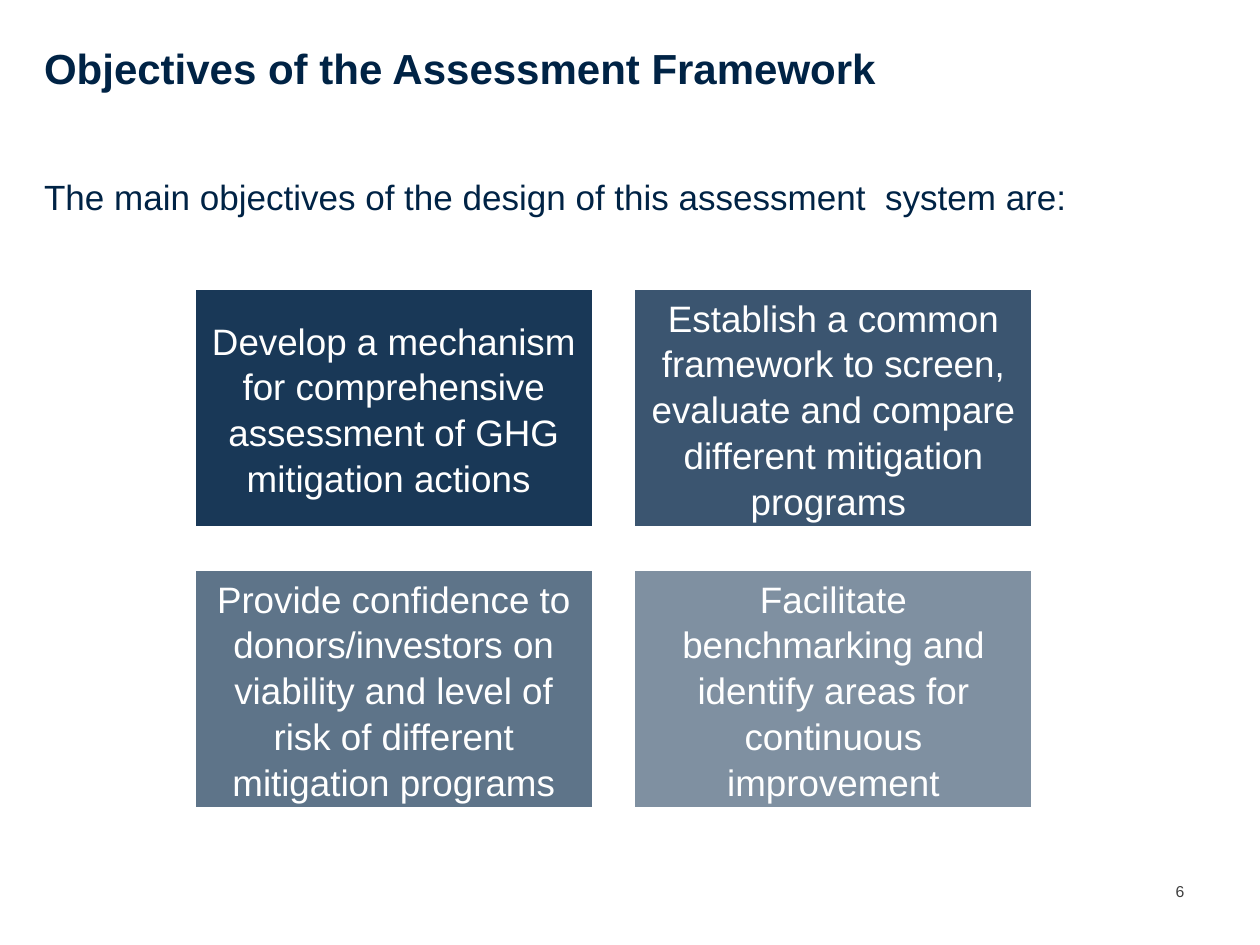
from lxml import etree
from pptx import Presentation
from pptx.dml.color import RGBColor
from pptx.enum.shapes import MSO_SHAPE
from pptx.enum.text import MSO_ANCHOR, MSO_AUTO_SIZE, PP_ALIGN
from pptx.oxml.ns import qn
from pptx.util import Inches, Pt

RECTANGLE = MSO_SHAPE.RECTANGLE
TOP, MIDDLE, BOTTOM = MSO_ANCHOR.TOP, MSO_ANCHOR.MIDDLE, MSO_ANCHOR.BOTTOM
NO_AUTOFIT = MSO_AUTO_SIZE.NONE
LEFT, CENTER = PP_ALIGN.LEFT, PP_ALIGN.CENTER

NAVY = RGBColor(0x00, 0x23, 0x45)
GRAY = RGBColor(0x40, 0x40, 0x40)
WHITE = RGBColor(0xFF, 0xFF, 0xFF)

TITLE = "Objectives of the Assessment Framework"
INTRO = "The main objectives of the design of this assessment  system are:"
PAGE_NUMBER = "6"
OBJECTIVES = [
    ("Develop a mechanism for comprehensive assessment of GHG mitigation actions ", 90),
    ("Establish a common framework to screen, evaluate and compare different mitigation programs ", 77),
    ("Provide confidence to donors/investors on viability and level of risk of different mitigation programs", 63),
    ("Facilitate benchmarking and identify areas for continuous improvement", 50),
]

COLUMNS = 2
GRID_LEFT, GRID_TOP = 1.54, 2.29
CARD_WIDTH, CARD_HEIGHT = 3.17, 1.9
COLUMN_STEP, ROW_STEP = 3.49, 2.23

TITLE_FONT = {"name": "Arial", "size": Pt(24), "bold": True}
INTRO_FONT = {"name": "Arial", "size": Pt(20), "bold": False}
NUMBER_FONT = {"name": "Arial", "size": Pt(9)}
CARD_FONT = {"name": "Arial", "size": Pt(21)}


def place(part, left, top, width, height):
    """Move and size a part, in inches."""
    part.left, part.top = Inches(left), Inches(top)
    part.width, part.height = Inches(width), Inches(height)


def write(part, text, font, color, insets, anchor=TOP, align=LEFT):
    """Write one formatted paragraph into a part and return it."""
    frame = part.text_frame
    left, top, right, bottom = map(Inches, insets)
    frame_format = {
        "word_wrap": True, "auto_size": NO_AUTOFIT, "vertical_anchor": anchor,
        "margin_left": left, "margin_top": top,
        "margin_right": right, "margin_bottom": bottom,
    }
    for name, value in frame_format.items():
        setattr(frame, name, value)
    paragraph = frame.paragraphs[0]
    paragraph.alignment = align
    paragraph.space_before = Pt(0)
    run = paragraph.add_run()
    run.text = text
    for name, value in font.items():
        setattr(run.font, name, value)
    run.font.color.rgb = color
    return paragraph


def add_objective(slide, index, text, opacity):
    """Add one objective card at its place in the grid."""
    row, column = divmod(index, COLUMNS)
    left, top = GRID_LEFT + column * COLUMN_STEP, GRID_TOP + row * ROW_STEP
    card = slide.shapes.add_shape(
        RECTANGLE, Inches(left), Inches(top), Inches(CARD_WIDTH), Inches(CARD_HEIGHT))
    card.shadow.inherit = False
    card.fill.solid()
    card.fill.fore_color.rgb = NAVY
    fill_color = card.fill._xPr.find(qn("a:solidFill"))[0]
    etree.SubElement(fill_color, qn("a:alpha"), val=str(opacity * 1000))
    card.line.color.rgb = WHITE
    card.line.width = Pt(2)
    paragraph = write(card, text, CARD_FONT, WHITE, (0.09,) * 4, MIDDLE, CENTER)
    paragraph.line_spacing = 1.04


def main():
    """Build the objectives slide."""
    presentation = Presentation()
    presentation.slide_width, presentation.slide_height = Inches(10), Inches(7.5)
    slide = presentation.slides.add_slide(presentation.slide_layouts[1])

    title, intro = slide.placeholders
    place(title, 0.35, 0.13, 9.29, 0.63)
    write(title, TITLE, TITLE_FONT, NAVY, (0, 0, 0, 0.02), BOTTOM)

    place(intro, 0.35, 1.39, 9.29, 5.2)
    properties = write(intro, INTRO, INTRO_FONT, NAVY, (0,) * 4)._p.get_or_add_pPr()
    properties.set("marL", "0")
    properties.set("indent", "0")
    etree.SubElement(properties, qn("a:buNone"))

    number = slide.shapes.add_textbox(
        Inches(9.33), Inches(6.96), Inches(0.31), Inches(0.24))
    write(number, PAGE_NUMBER, NUMBER_FONT, GRAY, (0, 0.04, 0, 0))

    for index, (text, opacity) in enumerate(OBJECTIVES):
        add_objective(slide, index, text, opacity)

    presentation.save("out.pptx")


if __name__ == "__main__":
    main()
